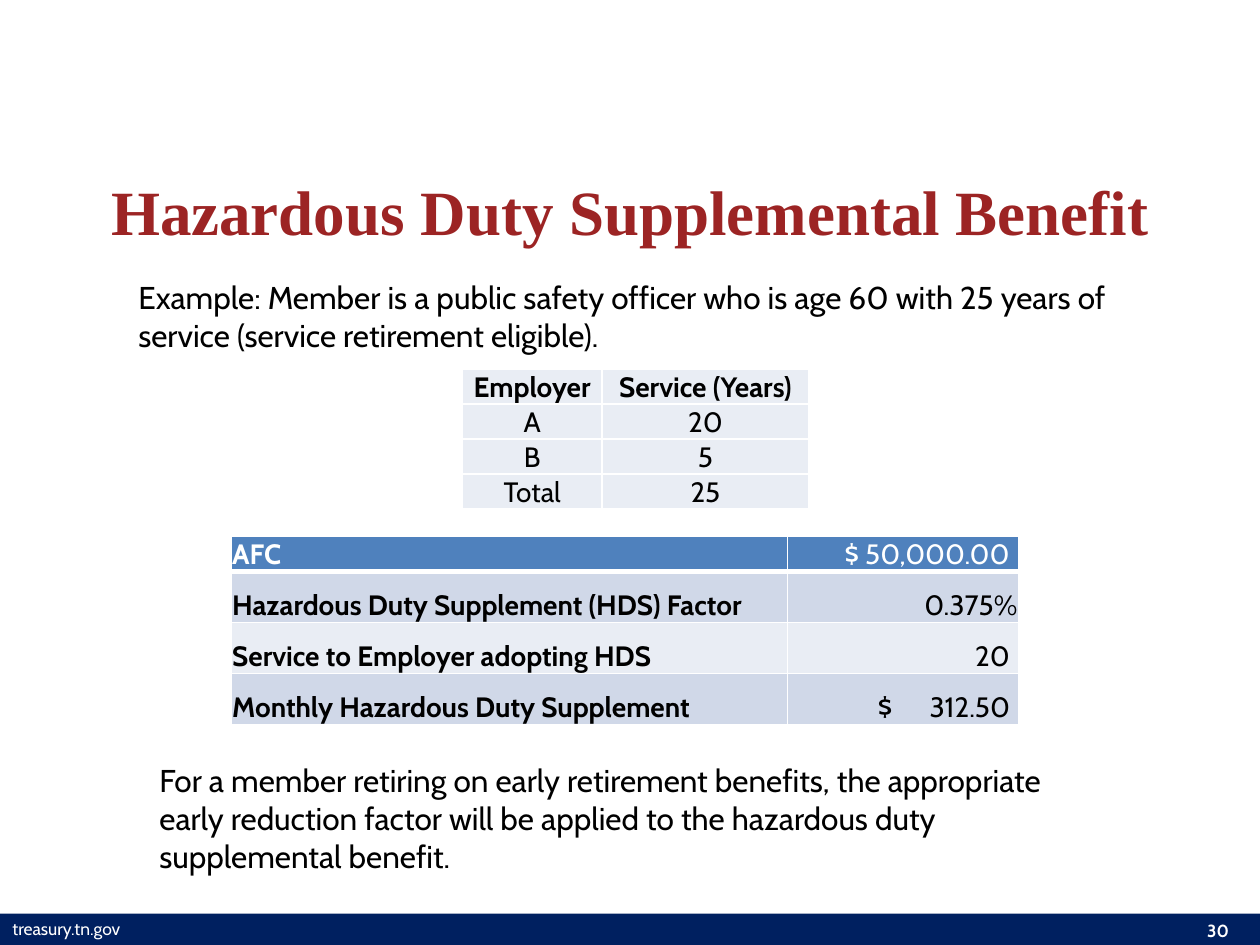
"""Build the hazardous duty supplemental benefit slide."""
from dataclasses import dataclass

from lxml import etree
from pptx import Presentation
from pptx.dml.color import RGBColor
from pptx.enum import shapes, text
from pptx.oxml import ns
from pptx.util import Pt


@dataclass(frozen=True)
class Theme:
    """Colours, fonts and type sizes."""

    white: str = "FFFFFF"
    black: str = "000000"
    navy: str = "002060"
    red: str = "9C2424"
    blue: str = "4F81BD"
    band: str = "D0D8E8"
    pale: str = "E9EDF4"
    body_font: str = "Cabin"
    title_font: str = "Times New Roman"
    title_size: float = 36
    body_size: float = 18
    table_size: float = 16
    footer_size: float = 10


@dataclass(frozen=True)
class Frame:
    """A rectangle in points."""

    left: float
    top: float
    width: float
    height: float

    def lengths(self) -> tuple:
        return Pt(self.left), Pt(self.top), Pt(self.width), Pt(self.height)


@dataclass(frozen=True)
class Cell:
    """The content and look of one table cell."""

    words: str
    fill: str
    align: text.PP_ALIGN = text.PP_ALIGN.CENTER
    bold: bool = False
    color: str = "000000"
    right_inset: float = 0.7
    tabs: tuple = ()
    bottom_line: float = 1


THEME = Theme()
LEFT, CENTER, RIGHT = text.PP_ALIGN.LEFT, text.PP_ALIGN.CENTER, text.PP_ALIGN.RIGHT


def style(para, size: float, color: str, bold: bool = False,
          font: str = THEME.body_font, align=LEFT) -> None:
    """Format every run of a paragraph."""
    para.alignment = align
    for span in para.runs:
        span.font.name = font
        span.font.size = Pt(size)
        span.font.bold = bold
        span.font.color.rgb = RGBColor.from_string(color)


def add_text(page, frame: Frame, words: str, size: float, color: str,
             bold: bool = False, align=LEFT) -> None:
    """Add a wrapped text box."""
    box = page.shapes.add_textbox(*frame.lengths())
    box.text_frame.word_wrap = True
    box.text_frame.text = words
    style(box.text_frame.paragraphs[0], size, color, bold, align=align)


def add_borders(cell, bottom: float) -> None:
    """Draw white lines around a cell."""
    properties = cell._tc.get_or_add_tcPr()
    sides = {"lnL": 1, "lnR": 1, "lnT": 1, "lnB": bottom}
    for position, (side, width) in enumerate(sides.items()):
        line = etree.Element(ns.qn(f"a:{side}"), w=str(Pt(width)))
        fill = etree.SubElement(line, ns.qn("a:solidFill"))
        etree.SubElement(fill, ns.qn("a:srgbClr"), val=THEME.white)
        properties.insert(position, line)


def add_tabs(para, stops: tuple) -> None:
    """Give a paragraph its tab stops."""
    tabs = etree.SubElement(para._p.get_or_add_pPr(), ns.qn("a:tabLst"))
    for position, kind in stops:
        etree.SubElement(tabs, ns.qn("a:tab"), pos=str(Pt(position)), algn=kind)


def fill_cell(cell, content: Cell) -> None:
    """Write and format one table cell."""
    cell.margin_left = cell.margin_top = Pt(0.7)
    cell.margin_right = Pt(content.right_inset)
    cell.margin_bottom = Pt(0)
    cell.vertical_anchor = text.MSO_ANCHOR.BOTTOM
    cell.fill.solid()
    cell.fill.fore_color.rgb = RGBColor.from_string(content.fill)
    add_borders(cell, content.bottom_line)
    cell.text_frame.text = content.words
    para = cell.text_frame.paragraphs[0]
    if content.tabs:
        add_tabs(para, content.tabs)
    style(para, THEME.table_size, content.color, content.bold, align=content.align)


def add_grid(page, left: float, top: float, widths: list[float],
             heights: list[float], rows: list[list[Cell]]) -> None:
    """Add a table of formatted cells."""
    frame = Frame(left, top, sum(widths), sum(heights))
    table = page.shapes.add_table(len(rows), len(widths), *frame.lengths()).table
    table.first_row = table.horz_banding = False
    for column, width in zip(table.columns, widths):
        column.width = Pt(width)
    for row, height, contents in zip(table.rows, heights, rows):
        row.height = Pt(height)
        for cell, content in zip(row.cells, contents):
            fill_cell(cell, content)


def add_footer(page) -> None:
    """Add the navy bar with the site and page number."""
    bar = page.shapes.add_shape(shapes.MSO_SHAPE.RECTANGLE,
                                *Frame(-11.5, 522, 738, 18).lengths())
    bar.shadow.inherit = False
    bar.fill.solid()
    bar.fill.fore_color.rgb = RGBColor.from_string(THEME.navy)
    bar.line.fill.background()
    add_text(page, Frame(0, 521.3, 132, 19.4), "treasury.tn.gov",
             THEME.footer_size, THEME.white)
    add_text(page, Frame(678, 522, 36, 19.4), "30",
             THEME.footer_size, THEME.white, True, CENTER)


def add_title(page) -> None:
    """Place and format the title."""
    title = page.shapes.title
    title.left, title.top, title.width, title.height = Frame(36, 84, 648, 72).lengths()
    title.text_frame.text = "Hazardous Duty Supplemental Benefit"
    title.text_frame.vertical_anchor = text.MSO_ANCHOR.MIDDLE
    style(title.text_frame.paragraphs[0], THEME.title_size, THEME.red, True,
          THEME.title_font, CENTER)


def add_benefit_table(page) -> None:
    """Add the calculation of the supplement."""
    values = [
        ("AFC", Cell("$ 50,000.00", THEME.blue, RIGHT, color=THEME.white,
                     right_inset=5, bottom_line=3)),
        ("Hazardous Duty Supplement (HDS) Factor", Cell("0.375%", THEME.band, RIGHT)),
        ("Service to Employer adopting HDS",
         Cell("20", THEME.pale, RIGHT, right_inset=5)),
        ("Monthly Hazardous Duty Supplement",
         Cell("\t$\t312.50", THEME.band, LEFT, tabs=((51, "l"), (126.5, "r")))),
    ]
    rows = [[Cell(label, value.fill, LEFT, True, value.color,
                  bottom_line=value.bottom_line), value] for label, value in values]
    add_grid(page, 132, 306.7, [318, 132], [20] + [29.1] * 3, rows)


def add_service_table(page) -> None:
    """Add the years of service by employer."""
    values = [("Employer", "Service (Years)"), ("A", "20"), ("B", "5"), ("Total", "25")]
    rows = [[Cell(words, THEME.pale, bold=index == 0) for words in row]
            for index, row in enumerate(values)]
    add_grid(page, 264.2, 211, [79.9, 118.1], [20] * 4, rows)


def main() -> None:
    """Build and save the deck."""
    deck = Presentation()
    deck.slide_width, deck.slide_height = Pt(720), Pt(540)
    page = deck.slides.add_slide(deck.slide_layouts[5])
    add_footer(page)
    add_title(page)
    add_benefit_table(page)
    add_service_table(page)
    add_text(page, Frame(72, 155.5, 570, 51),
             "Example: Member is a public safety officer who is age 60 with "
             "25 years of service (service retirement eligible).",
             THEME.body_size, THEME.black)
    add_text(page, Frame(84, 431.3, 552, 72.7),
             "For a member retiring on early retirement benefits, the appropriate "
             "early reduction factor will be applied to the hazardous duty "
             "supplemental benefit.", THEME.body_size, THEME.black)
    deck.save("out.pptx")


if __name__ == "__main__":
    main()
